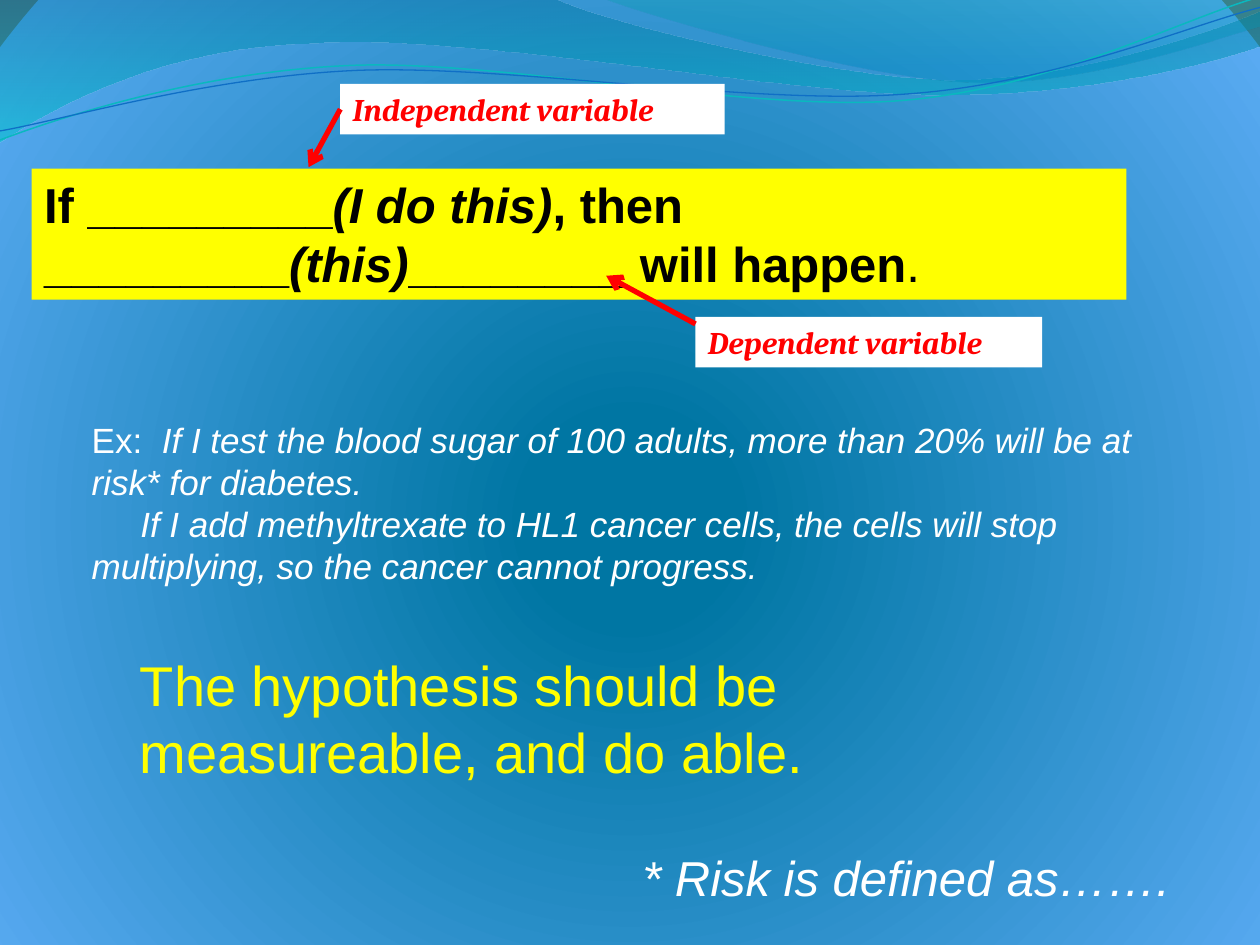
from math import cos, radians, sin

from lxml.etree import SubElement
from pptx import Presentation
from pptx.dml.color import RGBColor
from pptx.enum.shapes import MSO_CONNECTOR, MSO_SHAPE
from pptx.enum.text import MSO_ANCHOR, PP_ALIGN
from pptx.oxml import parse_xml
from pptx.oxml.ns import nsdecls, qn
from pptx.util import Cm, Pt

RIBBON = [
    [(0, 0)], [(11.18, -0.03)],
    [(12.09, 0.43), (16.87, 1.6), (19.25, 1.6)],
    [(21.67, 1.6), (24.33, 0.66), (25.4, 0.23)],
    [(25.43, 0.91)],
    [(24.97, 1.12), (22.1, 1.93), (18.95, 1.91)],
    [(15.8, 1.91), (9.7, 0.71), (6.53, 0.86)],
    [(3.28, 0.91), (1.17, 2.11), (-0.03, 2.87)],
]
CREST = [
    [(12.17, -0.03)],
    [(12.93, 0.28), (17.32, 1.57), (19.53, 1.65)],
    [(21.74, 1.75), (24.41, 0.81), (25.4, 0.53)],
    [(25.4, 0)],
]
TEAL_WAVE = [
    [(0, 2.82)],
    [(1.22, 2.36), (4.01, 1.45), (7.04, 1.32)],
    [(10.03, 1.19), (15.06, 2.26), (18.11, 2.03)],
    [(21.16, 1.8), (23.83, 0.38), (25.35, -0.05)],
]
BLUE_WAVE = [
    [(0, 2.64)],
    [(1.19, 2.44), (4.17, 1.55), (7.19, 1.42)],
    [(10.24, 1.3), (15.16, 2.13), (18.21, 1.9)],
    [(21.23, 1.7), (23.9, 0.53), (25.4, 0.15)],
]
WAVE_TILT = -2.7


def color(value):
    """Return the colour for a hex string."""
    return RGBColor.from_string(value)


def set_gradient(properties, stops, direction):
    """Replace a solid fill by a gradient of (position, colour, opacity) stops."""
    stop_xml = "".join(
        f'<a:gs pos="{position * 1000}"><a:srgbClr val="{value}">'
        f'<a:alpha val="{opacity * 1000}"/></a:srgbClr></a:gs>'
        for position, value, opacity in stops
    )
    gradient = parse_xml(
        f'<a:gradFill {nsdecls("a")} rotWithShape="1">'
        f"<a:gsLst>{stop_xml}</a:gsLst>{direction}</a:gradFill>"
    )
    properties.replace(properties.find(qn("a:solidFill")), gradient)


def set_background(slide):
    """Give the slide its round blue gradient."""
    slide.background.fill.solid()
    stops = [(13, "0076A3", 100), (100, "59AAF2", 100), (100, "9EDFFA", 100),
             (100, "DDFAFF", 100), (100, "52767C", 100)]
    direction = (
        '<a:path path="circle"><a:fillToRect l="10000" t="110000" '
        'r="10000" b="100000"/></a:path>'
    )
    set_gradient(slide.element.find(f".//{qn('p:bgPr')}"), stops, direction)


def turn(segments, degrees, center):
    """Turn all points of the segments clockwise about a centre."""
    cosine, sine = cos(radians(degrees)), sin(radians(degrees))
    left, top = center
    return [
        [(left + (x - left) * cosine - (y - top) * sine,
          top + (x - left) * sine + (y - top) * cosine) for x, y in segment]
        for segment in segments
    ]


def add_outline(shapes, segments, closed):
    """Draw a freeform of lines and cubic curves along the segments."""
    anchors = [(Cm(x), Cm(y)) for x, y in (segment[-1] for segment in segments)]
    builder = shapes.build_freeform(*anchors[0])
    builder.add_line_segments(anchors[1:], close=closed)
    shape = builder.convert_to_shape()
    shape.shadow.inherit = False
    for step, segment in zip(shape.element.iter(qn("a:lnTo")), segments[1:]):
        if len(segment) == 3:
            step.tag = qn("a:cubicBezTo")
            step.clear()
            for x, y in segment:
                SubElement(step, qn("a:pt"), x=str(Cm(x) - shape.left),
                           y=str(Cm(y) - shape.top))
    return shape


def add_band(shapes, segments, stops):
    """Draw a translucent band that shades downwards."""
    shape = add_outline(shapes, segments, True)
    shape.line.fill.background()
    shape.fill.solid()
    set_gradient(shape.element.spPr, stops, '<a:lin ang="5400000" scaled="1"/>')


def add_wave(shapes, segments, center, value, width):
    """Draw a thin tilted wavy line."""
    shape = add_outline(shapes, turn(segments, -WAVE_TILT, center), False)
    shape.rotation = WAVE_TILT
    shape.fill.background()
    shape.line.color.rgb = color(value)
    shape.line.width = Pt(width)


def write_paragraph(paragraph, runs, size, value, font="Arial", **style):
    """Fill a paragraph with (text, run style) pairs."""
    paragraph.alignment = PP_ALIGN.LEFT
    paragraph.font.name = font
    paragraph.font.size = Pt(size)
    paragraph.font.color.rgb = color(value)
    for name, setting in style.items():
        setattr(paragraph.font, name, setting)
    for text, run_style in runs:
        run = paragraph.add_run()
        run.text = text
        for name, setting in run_style.items():
            setattr(run.font, name, setting)


def add_box(shapes, box, fill):
    """Add a filled rectangle with text at its top left."""
    shape = shapes.add_shape(MSO_SHAPE.RECTANGLE, *map(Cm, box))
    shape.shadow.inherit = False
    shape.fill.solid()
    shape.fill.fore_color.rgb = color(fill)
    shape.line.fill.background()
    shape.text_frame.word_wrap = True
    shape.text_frame.vertical_anchor = MSO_ANCHOR.TOP
    return shape


def add_text(shapes, box):
    """Add a wrapping text box and return its frame."""
    frame = shapes.add_textbox(*map(Cm, box)).text_frame
    frame.word_wrap = True
    return frame


def add_label(shapes, box, text):
    """Add a white box that names a variable."""
    label = add_box(shapes, box, "FFFFFF")
    write_paragraph(label.text_frame.paragraphs[0], [(text, {})], 18, "FF0000",
                    "Cambria", bold=True, italic=True)
    return label


def add_arrow(shapes, start, end):
    """Add a red arrow."""
    arrow = shapes.add_connector(MSO_CONNECTOR.STRAIGHT, *map(Cm, start + end))
    arrow.line.color.rgb = color("FF0000")
    arrow.line.width = Pt(3)
    properties = arrow.element.spPr
    SubElement(properties.find(qn("a:ln")), qn("a:tailEnd"), type="arrow")
    SubElement(properties, qn("a:effectLst"))
    return arrow


def main():
    """Build the hypothesis slide."""
    presentation = Presentation()
    presentation.slide_width = Cm(25.4)
    presentation.slide_height = Cm(19.05)
    slide = presentation.slides.add_slide(presentation.slide_layouts[6])
    shapes = slide.shapes
    set_background(slide)
    add_band(shapes, RIBBON, [(0, "0074A1", 45), (100, "00C6CF", 55)])
    add_band(shapes, CREST, [(0, "00A1A9", 30), (80, "008BBF", 45)])
    waves = shapes.add_group_shape().shapes
    add_wave(waves, TEAL_WAVE, (12.67, 1.46), "0AB8BF", 0.85)
    add_wave(waves, BLUE_WAVE, (12.69, 1.5), "0F6FC6", 0.75)

    formula = add_box(shapes, (0.64, 3.4, 22.07, 2.64), "FFFF00")
    write_paragraph(formula.text_frame.paragraphs[0], [
        ("If _________", {}), ("(I do this)", {"italic": True}),
        (", then _________", {}), ("(this)", {"italic": True}),
        ("________ will happen", {}), (".", {"bold": False}),
    ], 28, "000000", bold=True)

    advice = add_text(shapes, (2.57, 12.98, 20.52, 3))
    advice.margin_right = Cm(1)
    write_paragraph(advice.paragraphs[0], [
        ("The hypothesis should be measureable, and do able.", {})], 32, "FFFF00")

    examples = add_text(shapes, (1.6, 8.31, 22.43, 3.68))
    write_paragraph(examples.paragraphs[0], [
        ("Ex:  ", {"italic": False}),
        ("If I test the blood sugar of 100 adults, more than 20% will be at "
         "risk* for diabetes.", {}),
    ], 20, "FFFFFF", italic=True)
    second = examples.add_paragraph()
    write_paragraph(second, [
        ("If I add methyltrexate to HL1 cancer cells, the cells will stop "
         "multiplying, so the cancer cannot progress.", {})], 20, "FFFFFF", italic=True)
    second._p.get_or_add_pPr().set("indent", str(Cm(0.98)))

    callout = shapes.add_group_shape().shapes
    independent = add_label(callout, (6.86, 1.69, 7.75, 1.02), "Independent variable")
    add_arrow(callout, (6.86, 2.2), (6.22, 3.37)).begin_connect(independent, 1)
    add_label(shapes, (14.02, 6.39, 6.99, 1.02), "Dependent variable")
    add_arrow(shapes, (14.02, 6.53), (12.22, 5.56))

    footnote = add_text(shapes, (12.7, 16.97, 11.18, 1.45))
    write_paragraph(footnote.paragraphs[0], [("* Risk is defined as…….", {})],
                    28, "FFFFFF", italic=True)
    presentation.save("out.pptx")


if __name__ == "__main__":
    main()
